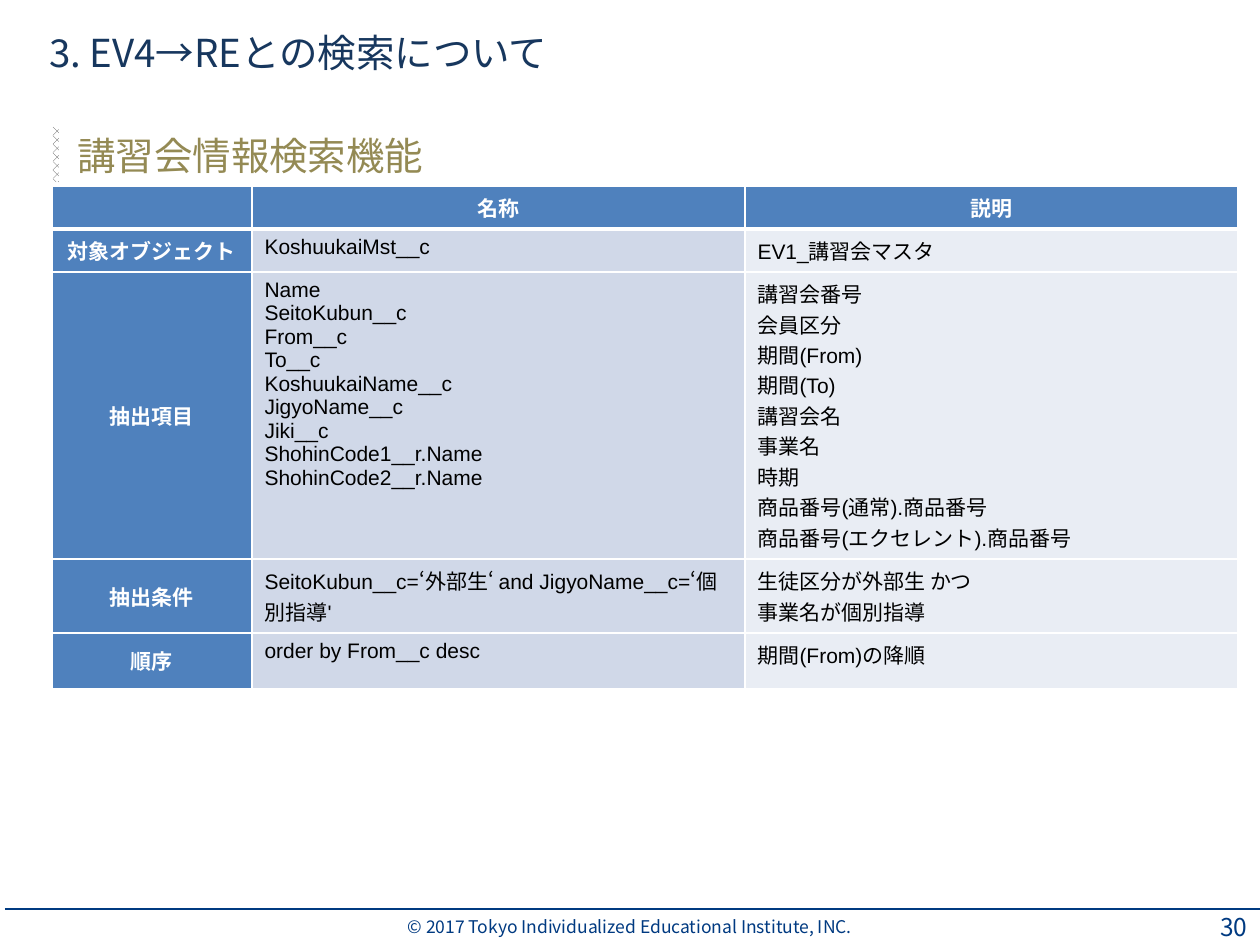
from lxml import etree
from pptx import Presentation
from pptx import util as u
from pptx.dml.color import RGBColor
from pptx.enum import dml, lang, shapes, text
from pptx.oxml import ns

PX = 914400 / 126
NAVY = RGBColor(0x00, 0x3A, 0x81)
INK = RGBColor(0x17, 0x37, 0x5E)
GOLD = RGBColor(0x94, 0x8A, 0x54)
GRAY = RGBColor(0x4D, 0x4D, 0x4D)
BLUE = RGBColor(0x4F, 0x81, 0xBD)
MID = RGBColor(0xD0, 0xD8, 0xE8)
PALE = RGBColor(0xE9, 0xED, 0xF4)
WHITE = RGBColor(0xFF, 0xFF, 0xFF)
BLACK = RGBColor(0x00, 0x00, 0x00)
NOTO = "Noto Sans CJK JP"
LEFT, MID_AL, RIGHT = (text.PP_ALIGN.LEFT, text.PP_ALIGN.CENTER,
                       text.PP_ALIGN.RIGHT)

COLS = [200, 493, 493]
ROWS = [43, 43, 287, 74, 56]
DATA = [
    ("", "名称", "説明"),
    ("対象オブジェクト", "KoshuukaiMst__c", "EV1_講習会マスタ"),
    ("抽出項目",
     "Name\nSeitoKubun__c\nFrom__c\nTo__c\nKoshuukaiName__c\n"
     "JigyoName__c\nJiki__c\nShohinCode1__r.Name\nShohinCode2__r.Name",
     "講習会番号\n会員区分\n期間(From)\n期間(To)\n講習会名\n事業名\n時期\n"
     "商品番号(通常).商品番号\n商品番号(エクセレント).商品番号"),
    ("抽出条件", "SeitoKubun__c=‘外部生‘ and JigyoName__c=‘個別指導'",
     "生徒区分が外部生 かつ\n事業名が個別指導"),
    ("順序", "order by From__c desc", "期間(From)の降順"),
]


def px(*vals):
    return [u.Emu(round(v * PX)) for v in vals]


def style(frame, size, color, face, align=LEFT, bold=False):
    for par in frame.paragraphs:
        par.alignment = align
        for run in par.runs:
            font = run.font
            font.size, font.bold, font.name = u.Pt(size), bold, face
            font.color.rgb = color
            font.language_id = lang.MSO_LANGUAGE_ID.JAPANESE
            east = etree.SubElement(run._r.get_or_add_rPr(), ns.qn("a:ea"))
            east.set("typeface", NOTO)


def label(slide, box, words, size, color, align=LEFT):
    frame = slide.shapes.add_textbox(*px(*box)).text_frame
    frame.word_wrap = True
    frame.vertical_anchor = text.MSO_ANCHOR.MIDDLE
    frame.text = words
    style(frame, size, color, NOTO, align)
    return frame


def border(cell, sides):
    props = cell._tc.get_or_add_tcPr()
    for n, (side, width) in enumerate(sides.items()):
        line = etree.Element(ns.qn("a:ln" + side), w=str(u.Pt(width)))
        fill = etree.SubElement(line, ns.qn("a:solidFill"))
        etree.SubElement(fill, ns.qn("a:srgbClr"), val=str(WHITE))
        props.insert(n, line)


def head(slide, x, y, w, h):
    # Section name with a patterned upright bar on its left
    label(slide, (x + 12, y + 1, w - 12, h), "講習会情報検索機能", 22, GOLD)
    long, thin = 55, 6
    bar = slide.shapes.add_shape(
        shapes.MSO_SHAPE.RECTANGLE,
        *px(x + (thin - long) / 2, y + (h - thin) / 2, long, thin))
    bar.rotation = 270
    bar.shadow.inherit = False
    bar.line.fill.background()
    bar.fill.patterned()
    bar.fill.pattern = dml.MSO_PATTERN.PERCENT_50
    bar.fill.fore_color.rgb = GRAY
    bar.fill.back_color.rgb = WHITE


def grid(slide, x, y):
    # Search definition table
    box = px(x, y, sum(COLS), sum(ROWS))
    table = slide.shapes.add_table(len(ROWS), len(COLS), *box).table
    for col, width in zip(table.columns, px(*COLS)):
        col.width = width
    for row, height in zip(table.rows, px(*ROWS)):
        row.height = height
    for r, row in enumerate(DATA):
        for c, words in enumerate(row):
            cell = table.cell(r, c)
            top, side = r == 0, c == 0
            key = top or side
            cell.text = words
            if not words:
                cell.text_frame.paragraphs[0].font.size = u.Pt(12)
            cell.fill.solid()
            cell.fill.fore_color.rgb = BLUE if key else (MID, PALE)[c - 1]
            if side and not top:
                cell.vertical_anchor = text.MSO_ANCHOR.MIDDLE
            style(cell.text_frame, 12, WHITE if key else BLACK, "Arial",
                  MID_AL if key else LEFT, key)
            border(cell, {"L": 1, "R": 1, "T": 3 if r == 1 else 1,
                          "B": 3 if top else 1})


def foot(slide, x, y, w, h):
    # Rule, copyright and page number
    note = label(slide, (x + 217, y, 815, h),
                 "© 2017 Tokyo Individualized Educational Institute, INC.",
                 10, NAVY, MID_AL)
    note.margin_top = note.margin_bottom = 0
    rule = slide.shapes.add_connector(
        shapes.MSO_CONNECTOR.STRAIGHT, *px(x, y, x + w, y))
    rule.line.color.rgb = NAVY
    rule.line.width = u.Pt(1)
    etree.SubElement(rule._element.spPr, ns.qn("a:effectLst"))
    label(slide, (x + w - 75, y, 74, h), "30", 14, NAVY, RIGHT)


def main():
    deck = Presentation()
    deck.slide_width, deck.slide_height = px(1260, 945)
    slide = deck.slides.add_slide(deck.slide_layouts[6])
    foot(slide, 5, 909, 1256, 36)
    label(slide, (37, 14, 984, 76), "3. EV4→REとの検索について", 22, INK)
    head(slide, 53, 118, 1152, 73)
    grid(slide, 52, 186)
    deck.save("out.pptx")


if __name__ == "__main__":
    main()
